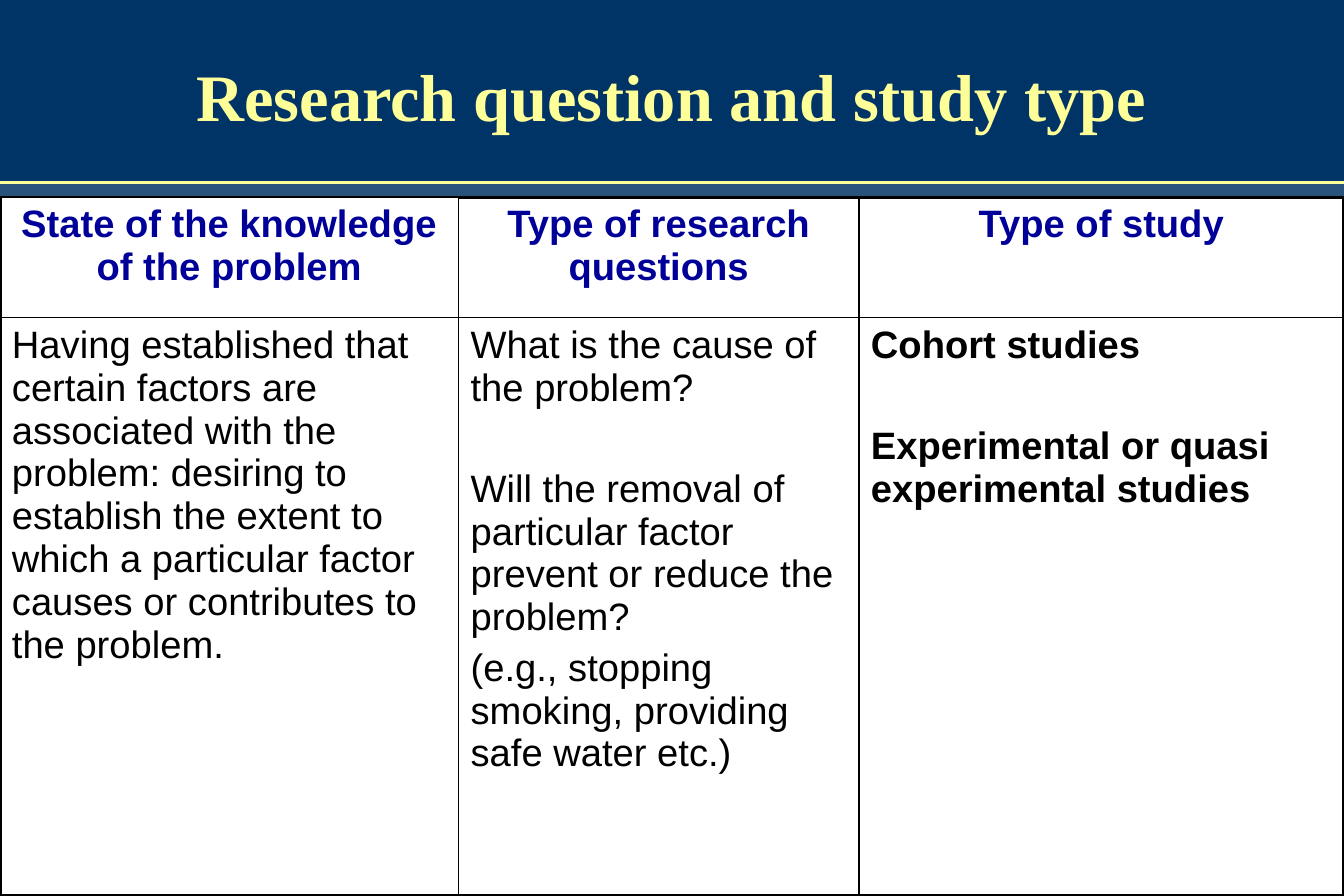
from lxml import etree
from pptx import Presentation
from pptx.dml.color import RGBColor
from pptx.enum import shapes, text
from pptx.oxml import ns
from pptx.util import Inches, Pt

NAVY = RGBColor(0x00, 0x33, 0x66)
STEEL = RGBColor(0x29, 0x53, 0x7D)
YELLOW = RGBColor(0xFF, 0xFF, 0x99)
BLUE = RGBColor(0x00, 0x00, 0x99)
BLACK = RGBColor(0x00, 0x00, 0x00)
WHITE = RGBColor(0xFF, 0xFF, 0xFF)

SLIDE_WIDTH = 11.25
BAND_HEIGHT = 1.53
TABLE_TOP = 1.65
COLUMN_WIDTHS = (3.84, 3.35, 4.06)
ROW_HEIGHTS = (1.01, 4.84)
THIN, THICK = 1, 2.25
NEXT_LINE, NEXT_TOPIC = 4.6, 35

HEADINGS = (
    "State of the knowledge of the problem",
    "Type of research questions",
    "Type of study",
)
ANSWERS = (
    [("Having established that certain factors are associated with the problem: "
      "desiring to establish the extent to which a particular factor causes or "
      "contributes to the problem.", 0)],
    [("What is the cause of the problem?", 0),
     ("Will the removal of particular factor prevent or reduce the problem?", NEXT_TOPIC),
     ("(e.g., stopping smoking, providing safe water etc.)", NEXT_LINE)],
    [("Cohort studies", 0),
     ("Experimental or quasi experimental studies", NEXT_TOPIC)],
)


def write(paragraph, wording, font="Arial", size=23, color=BLACK, bold=False,
          align=text.PP_ALIGN.LEFT, before=0, line_spacing=1.0):
    paragraph.alignment = align
    paragraph.space_before = Pt(before)
    paragraph.line_spacing = line_spacing
    run = paragraph.add_run()
    run.text = wording
    run.font.name = font
    run.font.size = Pt(size)
    run.font.bold = bold
    run.font.color.rgb = color


def add_header_band(slide):
    band = slide.shapes.add_shape(
        shapes.MSO_SHAPE.RECTANGLE, 0, 0, Inches(SLIDE_WIDTH), Inches(BAND_HEIGHT))
    band.shadow.inherit = False
    band.fill.solid()
    band.fill.fore_color.rgb = NAVY
    band.line.fill.background()

    rule = slide.shapes.add_connector(
        shapes.MSO_CONNECTOR.STRAIGHT, 0, Inches(BAND_HEIGHT),
        Inches(SLIDE_WIDTH), Inches(BAND_HEIGHT))
    rule.line.color.rgb = YELLOW
    rule.line.width = Pt(2)
    etree.SubElement(rule.element.spPr, ns.qn("a:effectLst"))

    for backdrop in (band, rule):
        slide.shapes.title.element.addprevious(backdrop.element)


def place_title(title, wording):
    title.left, title.top = Inches(0.84), Inches(0.17)
    title.width, title.height = Inches(9.56), Inches(1.36)
    frame = title.text_frame
    frame.word_wrap = True
    frame.auto_size = text.MSO_AUTO_SIZE.NONE
    frame.vertical_anchor = text.MSO_ANCHOR.MIDDLE
    write(frame.paragraphs[0], wording, font="Times New Roman", size=40,
          color=YELLOW, bold=True, align=text.PP_ALIGN.CENTER, line_spacing=0.85)


def set_borders(cell, **widths):
    properties = cell._tc.get_or_add_tcPr()
    for side in "LRTB":
        border = etree.SubElement(
            properties, ns.qn(f"a:ln{side}"), w=str(Pt(widths[side])))
        fill = etree.SubElement(border, ns.qn("a:solidFill"))
        etree.SubElement(fill, ns.qn("a:srgbClr"), val=str(BLACK))


def fill_cell(cell, entries, **style):
    cell.fill.solid()
    cell.fill.fore_color.rgb = WHITE
    frame = cell.text_frame
    for index, (wording, before) in enumerate(entries):
        paragraph = frame.add_paragraph() if index else frame.paragraphs[0]
        write(paragraph, wording, before=before, **style)


def add_study_table(slide):
    table = slide.shapes.add_table(
        len(ROW_HEIGHTS), len(COLUMN_WIDTHS), 0, Inches(TABLE_TOP),
        Inches(SLIDE_WIDTH), Inches(sum(ROW_HEIGHTS))).table
    table.horz_banding = False
    for row, height in zip(table.rows, ROW_HEIGHTS):
        row.height = Inches(height)

    last = len(COLUMN_WIDTHS) - 1
    for index, width in enumerate(COLUMN_WIDTHS):
        table.columns[index].width = Inches(width)
        left = THIN if index else THICK
        right = THICK if index == last else THIN
        top = THICK if index else THIN
        heading, answer = table.cell(0, index), table.cell(1, index)
        set_borders(heading, L=left, R=right, T=top, B=THIN)
        set_borders(answer, L=left, R=right, T=THIN, B=THICK)
        fill_cell(heading, [(HEADINGS[index], 0)], color=BLUE, bold=True,
                  align=text.PP_ALIGN.CENTER)
        fill_cell(answer, ANSWERS[index], bold=index == last)


def main():
    presentation = Presentation()
    presentation.slide_width = Inches(SLIDE_WIDTH)
    presentation.slide_height = Inches(7.5)
    slide = presentation.slides.add_slide(presentation.slide_layouts[5])
    slide.background.fill.solid()
    slide.background.fill.fore_color.rgb = STEEL
    add_header_band(slide)
    place_title(slide.shapes.title, "Research question and study type")
    add_study_table(slide)
    presentation.save("out.pptx")


if __name__ == "__main__":
    main()
